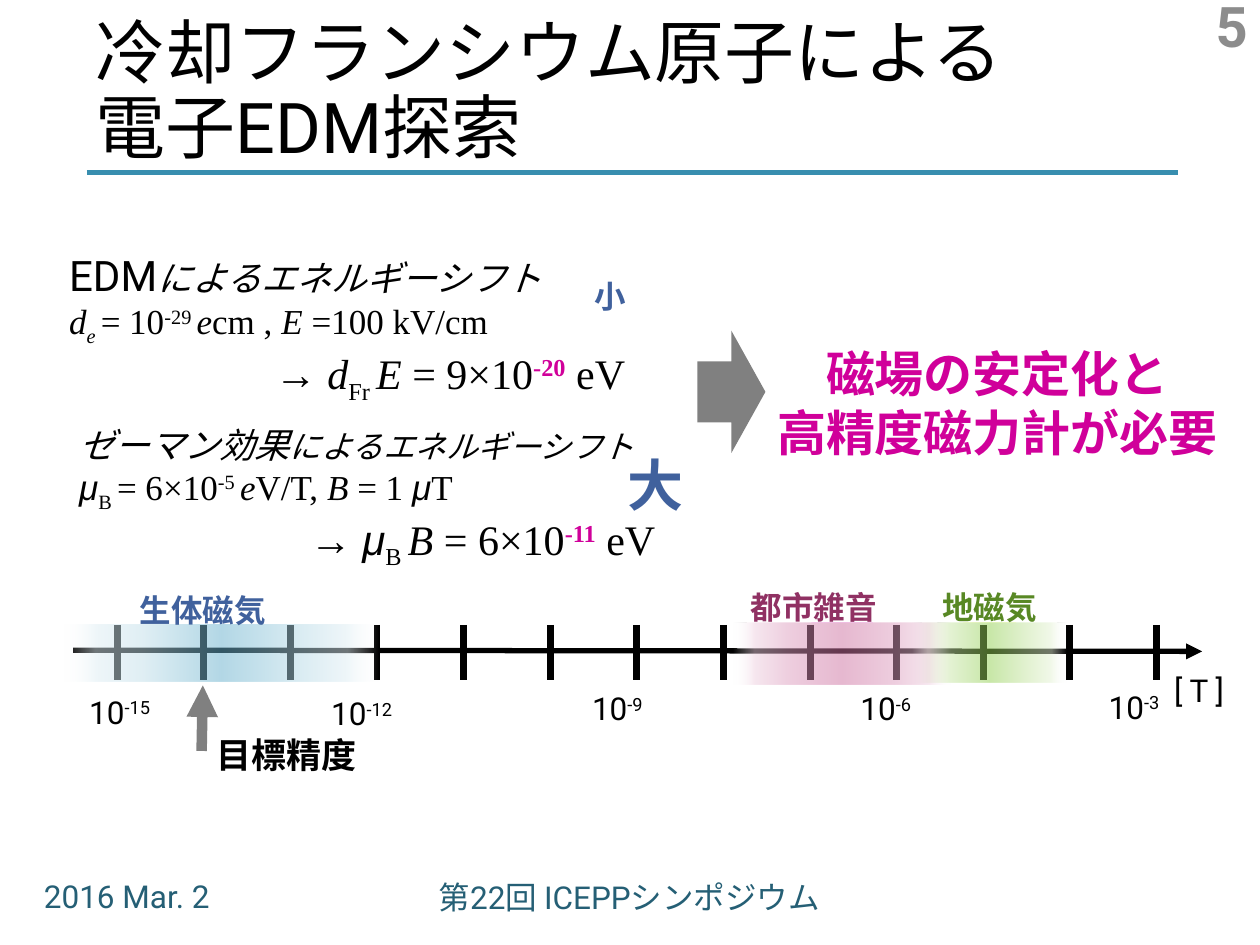
from dataclasses import dataclass

from lxml import etree
from pptx import Presentation
from pptx.dml.color import RGBColor
from pptx.enum.shapes import MSO_CONNECTOR, MSO_SHAPE
from pptx.enum.text import MSO_ANCHOR, PP_ALIGN
from pptx.oxml.ns import qn
from pptx.util import Inches, Pt

LEFT, CENTER, RIGHT = PP_ALIGN.LEFT, PP_ALIGN.CENTER, PP_ALIGN.RIGHT
TOP, MIDDLE, BOTTOM = MSO_ANCHOR.TOP, MSO_ANCHOR.MIDDLE, MSO_ANCHOR.BOTTOM
STRAIGHT = MSO_CONNECTOR.STRAIGHT
DOWN_ARROW, RECTANGLE = MSO_SHAPE.DOWN_ARROW, MSO_SHAPE.RECTANGLE
NO_TABLE_STYLE = "{2D5ABB26-0587-4C30-8999-92F81FD0307C}"


@dataclass(frozen=True)
class Theme:
    sans: str = "Roboto"
    serif: str = "Times New Roman"
    symbol: str = "Arial"
    ink: str = "000000"
    gray: str = "808080"
    page: str = "8C8C8C"
    rule: str = "388EAF"
    footer: str = "255F75"
    accent: str = "D0009A"
    blue: str = "40619D"
    plum: str = "903163"
    green: str = "588824"
    title: int = 40
    large: int = 32
    claim: int = 28
    formula: int = 24
    body: int = 20
    label: int = 18


THEME = Theme()
ITALIC = {"italic": True}
SUB = {"baseline": -25}
SUP = {"baseline": 30}
SYMBOL = {"name": THEME.symbol, "italic": True}
HOT = SUP | {"color": THEME.accent, "bold": True}


@dataclass
class Line:
    runs: list
    size: int
    font: str = THEME.serif
    align: PP_ALIGN = LEFT


class SlideBuilder:
    def __init__(self, slide, theme):
        self.slide = slide
        self.theme = theme

    def style(self, font, size=None, name=None, color=None, bold=None, italic=None):
        if size:
            font.size = Pt(size)
        if name:
            font.name = name
        if color:
            font.color.rgb = RGBColor.from_string(color)
        if bold is not None:
            font.bold = bold
        if italic is not None:
            font.italic = italic

    def text(self, box, lines, color=None, bold=None, anchor=TOP, spacing=None):
        frame = self.slide.shapes.add_textbox(*map(Inches, box)).text_frame
        frame.word_wrap = True
        frame.vertical_anchor = anchor
        for index, line in enumerate(lines):
            paragraph = frame.add_paragraph() if index else frame.paragraphs[0]
            paragraph.alignment = line.align
            paragraph.line_spacing = spacing
            self.style(paragraph.font, line.size, line.font, color or self.theme.ink, bold)
            for words, change in line.runs:
                run = paragraph.add_run()
                run.text = words
                change = dict(change)
                baseline = change.pop("baseline", None)
                self.style(run.font, **change)
                if baseline:
                    run.font._element.set("baseline", str(baseline * 1000))

    def label(self, box, words, size=THEME.label, color=None, bold=None, align=LEFT,
              anchor=TOP):
        line = Line([(words, {})], size, self.theme.sans, align)
        self.text(box, [line], color, bold, anchor)

    def title(self, box, words):
        frame = self.slide.shapes.add_textbox(*map(Inches, box)).text_frame
        frame.word_wrap = True
        frame.vertical_anchor = BOTTOM
        paragraph = frame.paragraphs[0]
        paragraph.text = words
        paragraph.line_spacing = 0.9
        self.style(paragraph.font, self.theme.title, self.theme.sans, self.theme.ink)

    def line(self, start, end, color, width, arrow=False):
        connector = self.slide.shapes.add_connector(STRAIGHT, *map(Inches, start + end))
        connector.line.color.rgb = RGBColor.from_string(color)
        connector.line.width = Pt(width)
        if arrow:
            etree.SubElement(connector.line._get_or_add_ln(), qn("a:tailEnd"), type="triangle")
        etree.SubElement(connector._element.spPr, qn("a:effectLst"))

    def shape(self, preset, box):
        shape = self.slide.shapes.add_shape(preset, *map(Inches, box))
        shape.shadow.inherit = False
        shape.line.fill.background()
        return shape

    def block_arrow(self, box, color, rotation):
        arrow = self.shape(DOWN_ARROW, box)
        arrow.fill.solid()
        arrow.fill.fore_color.rgb = RGBColor.from_string(color)
        arrow.rotation = rotation

    def glow_band(self, box, colors):
        band = self.shape(RECTANGLE, box)
        band.fill.gradient()
        band.fill.gradient_angle = 0
        stops = band._element.spPr.find(qn("a:gradFill")).find(qn("a:gsLst"))
        for stop in list(stops):
            stops.remove(stop)
        for position, color in zip((0, 10, 25, 50, 75, 90, 100), colors):
            stop = etree.SubElement(stops, qn("a:gs"), pos=str(position * 1000))
            tone = etree.SubElement(stop, qn("a:srgbClr"), val=color)
            opacity = 0 if color == "FFFFFF" else 50
            etree.SubElement(tone, qn("a:alpha"), val=str(opacity * 1000))

    def cell_border(self, cell, side, width):
        border = etree.SubElement(cell._tc.get_or_add_tcPr(), qn(f"a:ln{side}"),
                                  w=str(Pt(width)))
        fill = etree.SubElement(border, qn("a:solidFill"))
        etree.SubElement(fill, qn("a:srgbClr"), val=self.theme.ink)

    def scale_ticks(self, box, count):
        table = self.slide.shapes.add_table(2, count, *map(Inches, box)).table
        table.first_row = table.horz_banding = False
        table._tbl.tblPr.find(qn("a:tableStyleId")).text = NO_TABLE_STYLE
        for row, inner_side in zip(table.rows, "BT"):
            for cell in row.cells:
                cell.margin_left = cell.margin_right = 0
                cell.margin_top = cell.margin_bottom = 0
                for side, width in (("L", 4.5), ("R", 4.5), (inner_side, 0.25)):
                    self.cell_border(cell, side, width)
                cell.fill.background()
                paragraph = cell.text_frame.paragraphs[0]
                paragraph.font.size = Pt(8)
                etree.SubElement(paragraph._p, qn("a:endParaRPr"), sz="800")


def main():
    deck = Presentation()
    deck.slide_width, deck.slide_height = Inches(10), Inches(7.5)
    t = THEME
    page = SlideBuilder(deck.slides.add_slide(deck.slide_layouts[6]), t)

    page.line((0.69, 1.37), (9.35, 1.37), t.rule, 3)
    page.label((0.25, 6.91, 2.19, 0.4), "2016 Mar. 2", color=t.footer)
    page.label((1.28, 6.92, 7.43, 0.4), "第22回 ICEPPシンポジウム", color=t.footer, align=CENTER)
    page.title((0.66, 0, 8.29, 1.39), "冷却フランシウム原子による\v電子EDM探索")
    page.label((7.75, 0, 2.25, 0.4), "5", t.large, t.page, True, RIGHT, MIDDLE)
    page.block_arrow((5.32, 2.84, 0.97, 0.54), t.gray, 270)

    page.text((0.45, 1.93, 4.61, 1.25), [
        Line([("EDM", {"size": t.formula, "name": t.sans}),
              ("によるエネルギーシフト", ITALIC)], t.body),
        Line([("d", ITALIC), ("e ", ITALIC | SUB), ("= 10", {}), ("-29 ", SUP),
              ("e", ITALIC), ("cm , ", {}), ("E ", ITALIC), ("=100 kV/cm", {})], t.body),
        Line([(" → ", {}), ("d", ITALIC), ("Fr ", SUB), ("E ", ITALIC), ("= 9×10", {}),
              ("-20", HOT), (" eV", {})], t.formula, align=RIGHT),
    ])
    page.text((0.53, 3.31, 4.77, 1.18), [
        Line([("ゼーマン効果", ITALIC),
              ("によるエネルギーシフト", ITALIC | {"size": t.label})], t.body, t.symbol),
        Line([("μ", SYMBOL), ("B ", SUB), ("= 6×10", {}), ("-5 ", SUP), ("e", ITALIC),
              ("V/T, ", {}), ("B ", ITALIC), ("= 1 ", {}), ("μ", SYMBOL), ("T", {})], t.body),
        Line([("→ ", {}), ("μ", SYMBOL), ("B ", SUB), ("B ", ITALIC), ("= 6×10", {}),
              ("-11", HOT), (" eV", {})], t.formula, align=RIGHT),
    ])
    page.text((5.99, 2.68, 3.85, 1.04),
              [Line([(words, {})], t.claim, t.sans, CENTER)
               for words in ("磁場の安定化と", "高精度磁力計が必要")], t.accent, True)
    page.label((4.62, 2.15, 0.66, 0.4), "小", t.label, t.blue, True)
    page.label((4.88, 3.53, 0.66, 0.64), "大", t.large, t.blue, True)

    page.scale_ticks((0.93, 4.96, 8.25, 0.44), 12)
    page.line((0.58, 5.16), (9.54, 5.17), t.ink, 3, arrow=True)
    for left, top, exponent in ((0.61, 5.45, "-15"), (2.53, 5.46, "-12"), (4.6, 5.42, "-9"),
                                (6.73, 5.42, "-6"), (8.7, 5.41, "-3")):
        page.text((left, top, 0.98, 0.4),
                  [Line([("10", {}), (exponent, SUP)], t.label, t.sans)])

    for box, colors in (
        ((0.51, 4.96, 2.49, 0.45), "FFFFFF E0EFF5 C2E0EB 66B1CE B7DBE8 E0EFF5 FFFFFF"),
        ((7.24, 4.94, 1.22, 0.48), "FFFFFF E5F3D5 C9E7A7 92D050 C9E7A7 E5F3D5 FFFFFF"),
        ((5.82, 4.94, 1.72, 0.49), "FFFFFF EFD0E0 DFA0C1 CF71A2 DFA0C1 EFD0E0 FFFFFF"),
    ):
        page.glow_band(box, colors.split())

    page.label((9.22, 5.28, 0.78, 0.4), "[ T ]")
    for left, top, source, color in ((1.01, 4.64, "生体磁気", t.blue),
                                     (5.86, 4.62, "都市雑音", t.plum),
                                     (7.38, 4.62, "地磁気", t.green)):
        page.label((left, top, 1.54, 0.4), source, color=color, bold=True)
    page.line((1.6, 5.96), (1.61, 5.44), t.gray, 6, arrow=True)
    page.label((1.62, 5.77, 2.03, 0.44), "目標精度", t.body, bold=True)

    deck.save("out.pptx")


if __name__ == "__main__":
    main()
